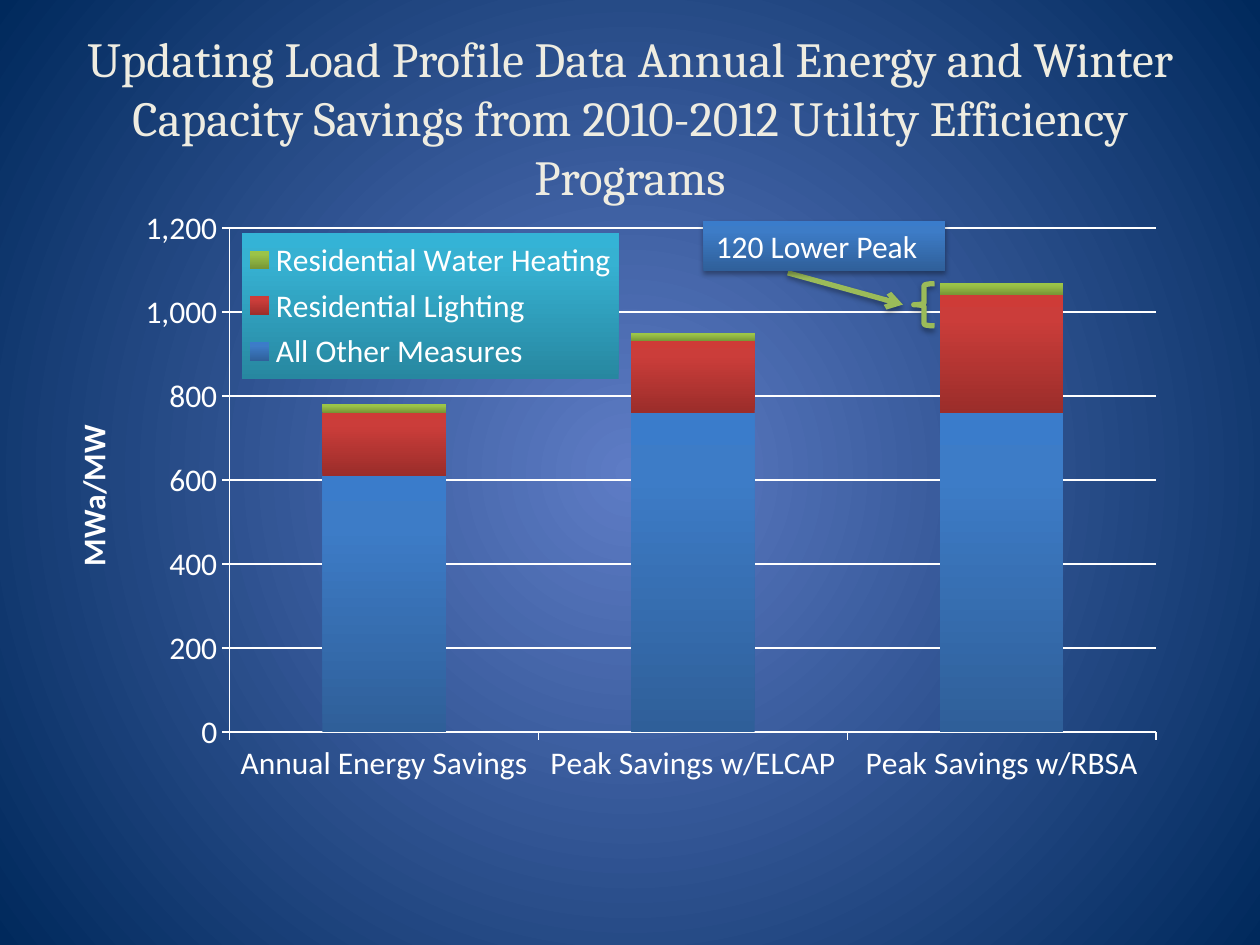
from dataclasses import dataclass

from lxml.etree import SubElement
from pptx import Presentation
from pptx.chart.data import CategoryChartData
from pptx.dml.color import RGBColor
from pptx.enum.chart import XL_CHART_TYPE, XL_LEGEND_POSITION, XL_TICK_MARK
from pptx.enum.shapes import MSO_CONNECTOR, MSO_SHAPE
from pptx.enum.text import MSO_ANCHOR, MSO_AUTO_SIZE, PP_ALIGN
from pptx.oxml import parse_xml
from pptx.oxml.ns import nsdecls, qn
from pptx.util import Cm, Pt


@dataclass(frozen=True)
class Theme:
    title_font: str = "Cambria"
    body_font: str = "Calibri"
    title_size: int = 28
    body_size: int = 18
    title_color: str = "EEECE1"
    text_color: str = "FFFFFF"
    accent: str = "9BBB59"
    background: tuple = ((0, "5E7CC5"), (100, "00295C"))
    blue: tuple = ((0, "2F5F99"), (80, "3D7CC7"), (100, "3A7CCB"))
    red: tuple = ((0, "9B2D2A"), (80, "CB3D3A"), (100, "CE3B37"))
    green: tuple = ((0, "769535"), (80, "9BC348"), (100, "9CC746"))
    aqua: tuple = ((0, "2787A0"), (80, "36B1D2"), (100, "34B3D6"))


def gradient_xml(stops, radial=False):
    gs = "".join(f'<a:gs pos="{pos * 1000}"><a:srgbClr val="{color}"/></a:gs>'
                 for pos, color in stops)
    if radial:
        direction = ('<a:path path="circle"><a:fillToRect l="50000" t="50000" '
                     'r="50000" b="50000"/></a:path>')
    else:
        direction = '<a:lin ang="16200000" scaled="0"/>'
    return (f'<a:gradFill {nsdecls("a")} rotWithShape="1"><a:gsLst>{gs}</a:gsLst>'
            f'{direction}</a:gradFill>')


def fill_gradient(owner, fill, stops, radial=False):
    """Give the fill of the XML element owner a gradient with any number of stops."""
    fill.gradient()
    old = owner.find(".//" + qn("a:gradFill"))
    old.getparent().replace(old, parse_xml(gradient_xml(stops, radial)))


def format_font(font, name, size, color, bold=False):
    font.name, font.size, font.bold = name, Pt(size), bold
    font.color.rgb = RGBColor.from_string(color)


def write_text(tf, text, align=PP_ALIGN.LEFT, **style):
    tf.word_wrap = True
    p = tf.paragraphs[0]
    p.alignment = align
    r = p.add_run()
    r.text = text
    format_font(r.font, **style)


def add_shadow(sp):
    spPr = sp._element.spPr
    for old in spPr.findall(qn("a:effectLst")):
        spPr.remove(old)
    spPr.append(parse_xml(
        f'<a:effectLst {nsdecls("a")}><a:outerShdw blurRad="{Pt(3.1)}" '
        f'dist="{Pt(1.8)}" dir="5400000" rotWithShape="0"><a:srgbClr val="000000">'
        '<a:alpha val="35000"/></a:srgbClr></a:outerShdw></a:effectLst>'))


def place_manually(parent, x, y, w, h, inner=False):
    """Set the layout of a chart part, in fractions of the chart."""
    layout = parent.find(qn("c:layout"))
    if layout is None:
        layout = parse_xml(f'<c:layout {nsdecls("c")}/>')
        parent.insert(0 if inner else 1, layout)
    manual = SubElement(layout, qn("c:manualLayout"))
    values = {"xMode": "edge", "yMode": "edge", "x": x, "y": y, "w": w, "h": h}
    if inner:
        values = {"layoutTarget": "inner", **values}
    for tag, value in values.items():
        SubElement(manual, qn(f"c:{tag}")).set("val", str(value))


class SlideBuilder:
    def __init__(self, prs, theme):
        self.theme = theme
        self.s = prs.slides.add_slide(prs.slide_layouts[5])
        self.body = dict(name=theme.body_font, size=theme.body_size,
                         color=theme.text_color)

    def background(self):
        fill_gradient(self.s._element, self.s.background.fill,
                      self.theme.background, radial=True)

    def title(self, text, x, y, w, h):
        sp = self.s.shapes.title
        sp.left, sp.top, sp.width, sp.height = Cm(x), Cm(y), Cm(w), Cm(h)
        tf = sp.text_frame
        tf.auto_size = MSO_AUTO_SIZE.NONE
        tf.vertical_anchor = MSO_ANCHOR.MIDDLE
        t = self.theme
        write_text(tf, text, PP_ALIGN.CENTER, name=t.title_font,
                   size=t.title_size, color=t.title_color)

    def stacked_chart(self, categories, series, axis_title, x, y, w, h):
        data = CategoryChartData(number_format="#,##0")
        data.categories = categories
        for name, values, _ in series:
            data.add_series(name, values)
        chart = self.s.shapes.add_chart(XL_CHART_TYPE.COLUMN_STACKED, Cm(x), Cm(y),
                                        Cm(w), Cm(h), data).chart
        chart.has_title = False
        format_font(chart.font, **self.body)
        plot = chart.plots[0]
        plot.gap_width, plot.overlap, plot.vary_by_categories = 150, 100, False
        for ser, (_, _, stops) in zip(plot.series, series):
            fill_gradient(ser._element, ser.format.fill, stops)
        place_manually(chart._chartSpace.chart.plotArea,
                       0.147, 0.045, 0.817, 0.782, inner=True)
        self.axes(chart, axis_title)
        self.legend(chart)

    def axes(self, chart, title):
        value_axis = chart.value_axis
        value_axis.minimum_scale, value_axis.maximum_scale = 0, 1200
        value_axis.major_unit = 200
        value_axis.has_major_gridlines = True
        value_axis.tick_labels.number_format = "#,##0"
        value_axis.tick_labels.number_format_is_linked = False
        write_text(value_axis.axis_title.text_frame, title, PP_ALIGN.CENTER,
                   bold=True, **self.body)
        for axis in (value_axis, chart.category_axis):
            axis.major_tick_mark = XL_TICK_MARK.OUTSIDE
            format_font(axis.tick_labels.font, **self.body)
        for part in (value_axis, chart.category_axis, value_axis.major_gridlines):
            self.stroke(part.format.line, self.theme.text_color, 0.75)

    def legend(self, chart):
        chart.has_legend = True
        legend = chart.legend
        legend.position = XL_LEGEND_POSITION.RIGHT
        legend.include_in_layout = False
        format_font(legend.font, **self.body)
        place_manually(legend._element, 0.158, 0.053, 0.332, 0.226)
        legend._element.find(qn("c:txPr")).addprevious(parse_xml(
            f'<c:spPr {nsdecls("c")}>{gradient_xml(self.theme.aqua)}</c:spPr>'))

    def stroke(self, line, color, width):
        line.color.rgb = RGBColor.from_string(color)
        line.width = Pt(width)

    def arrow(self, x1, y1, x2, y2):
        sp = self.s.shapes.add_connector(MSO_CONNECTOR.STRAIGHT,
                                         Cm(x1), Cm(y1), Cm(x2), Cm(y2))
        self.stroke(sp.line, self.theme.accent, 3)
        SubElement(sp.line._get_or_add_ln(), qn("a:tailEnd")).set("type", "arrow")
        add_shadow(sp)

    def brace(self, x, y, w, h):
        sp = self.s.shapes.add_shape(MSO_SHAPE.LEFT_BRACE, Cm(x), Cm(y), Cm(w), Cm(h))
        sp.fill.background()
        self.stroke(sp.line, self.theme.accent, 3)
        add_shadow(sp)

    def callout(self, text, x, y, w, h):
        sp = self.s.shapes.add_shape(MSO_SHAPE.RECTANGLE, Cm(x), Cm(y), Cm(w), Cm(h))
        fill_gradient(sp._element, sp.fill, self.theme.blue)
        sp.line.fill.background()
        add_shadow(sp)
        sp.text_frame.vertical_anchor = MSO_ANCHOR.TOP
        write_text(sp.text_frame, text, **self.body)


def main():
    prs = Presentation()
    prs.slide_width, prs.slide_height = Cm(25.4), Cm(19.05)
    theme = Theme()
    slide = SlideBuilder(prs, theme)
    slide.background()
    slide.title("Updating Load Profile Data Annual Energy and Winter Capacity "
                "Savings from 2010-2012 Utility Efficiency Programs",
                1.27, 0.76, 22.86, 3.18)
    slide.stacked_chart(
        ["Annual Energy Savings", "Peak Savings w/ELCAP", "Peak Savings w/RBSA"],
        [("All Other Measures", (610, 760, 760), theme.blue),
         ("Residential Lighting", (150, 170, 280), theme.red),
         ("Residential Water Heating", (20, 20, 30), theme.green)],
        "MWa/MW", 1.27, 4.01, 22.86, 13)
    slide.arrow(15.88, 5.5, 18.2, 6.14)
    slide.brace(18.42, 5.72, 0.42, 0.85)
    slide.callout("120 Lower Peak", 14.18, 4.45, 4.87, 1.02)
    prs.save("out.pptx")


if __name__ == "__main__":
    main()
